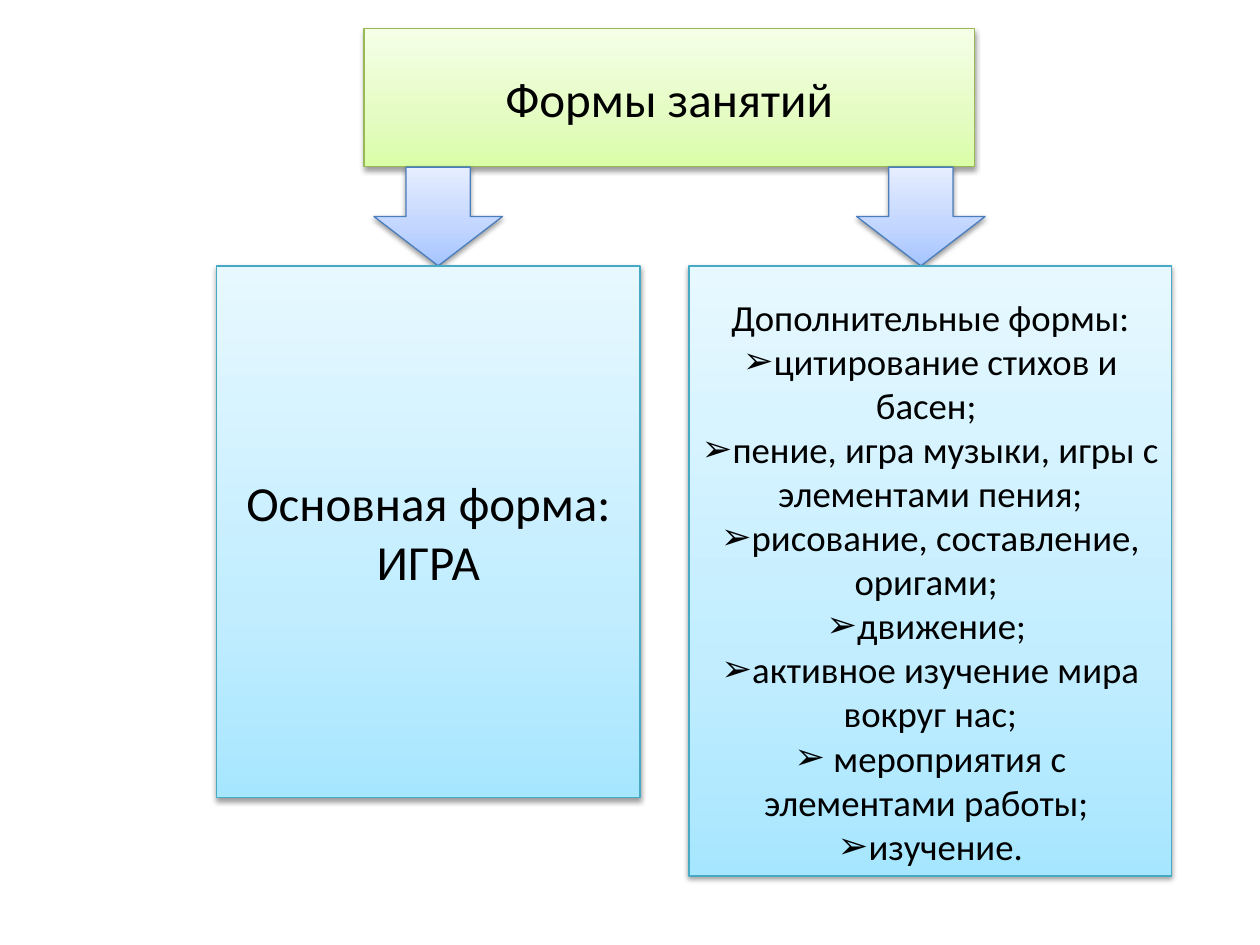
from copy import deepcopy
from dataclasses import dataclass

from lxml.etree import SubElement
from pptx import Presentation
from pptx.dml.color import RGBColor
from pptx.enum.shapes import MSO_SHAPE
from pptx.enum.text import MSO_ANCHOR, MSO_AUTO_SIZE, PP_ALIGN
from pptx.oxml.ns import qn
from pptx.util import Cm, Pt


@dataclass(frozen=True)
class Theme:
    # Each palette: bottom, middle and top of the gradient, then the line
    green: tuple = ("DAFDA7", "E4FCC2", "F5FFE7", "98B955")
    blue: tuple = ("A4C4FF", "BFD4FF", "E6EEFF", "4B7EBC")
    cyan: tuple = ("A7E6FF", "C1EDFF", "E7F8FF", "46AAC5")
    stops: tuple = (0, 0.35, 1)
    ink: str = "000000"
    font: str = "Calibri"
    big: int = 28
    small: int = 21


THEME = Theme()
TOP = 5.36  # upper edge of both panels, where the arrows end
HEAD = "Формы занятий"
MAIN = ["Основная форма:", "ИГРА"]
EXTRA = [
    "Дополнительные формы:",
    "цитирование стихов и басен; ",
    "пение, игра музыки, игры с элементами пения;",
    "рисование, составление, оригами; ",
    "движение; ",
    "активное изучение мира вокруг нас;",
    " мероприятия с элементами работы; ",
    "изучение.",
]


def place(shape, left, top, width, height):
    shape.left, shape.top = Cm(left), Cm(top)
    shape.width, shape.height = Cm(width), Cm(height)


def paint(shape, tones):
    """Give a shape its gradient, thin line and soft shadow."""
    fill = shape.fill
    fill.gradient()
    fill.gradient_angle = 90
    props = shape._element.spPr
    stops = props.find(".//" + qn("a:gsLst"))
    stops.insert(1, deepcopy(stops[0]))
    for stop, spot, tone in zip(fill.gradient_stops, THEME.stops, tones):
        stop.position = spot
        stop.color.rgb = RGBColor.from_string(tone)
    shape.line.color.rgb = RGBColor.from_string(tones[-1])
    shape.line.width = Pt(0.75)

    shape.shadow.inherit = False
    shade = SubElement(props.find(qn("a:effectLst")), qn("a:outerShdw"),
                       blurRad=str(Pt(3.1)), dist=str(Pt(1.6)),
                       dir="5400000", rotWithShape="0")
    black = SubElement(shade, qn("a:srgbClr"), val="000000")
    SubElement(black, qn("a:alpha"), val="38000")


def mark(para, sign):
    """Set the bullet sign of a paragraph, or none."""
    props = para._p.get_or_add_pPr()
    props.set("marL", "0")
    props.set("indent", "0")
    if sign:
        SubElement(props, qn("a:buChar"), char=sign)
    else:
        SubElement(props, qn("a:buNone"))


def write(shape, lines, size, sign=None):
    """Fill a box with centred lines; the sign marks all but the first."""
    frame = shape.text_frame
    frame.text = "\n".join(lines)
    frame.word_wrap = True
    frame.auto_size = MSO_AUTO_SIZE.NONE
    frame.vertical_anchor = MSO_ANCHOR.MIDDLE
    for i, para in enumerate(frame.paragraphs):
        para.alignment = PP_ALIGN.CENTER
        para.space_before = Pt(0)
        mark(para, sign if i else None)
        for run in para.runs:
            run.font.name = THEME.font
            run.font.size = Pt(size)
            run.font.color.rgb = RGBColor.from_string(THEME.ink)


def panel(shape, box, tones, lines, size, sign=None):
    place(shape, *box)
    paint(shape, tones)
    write(shape, lines, size, sign)


def arrow(slide, left):
    """Add an arrow from the heading to a panel, behind the panels."""
    shape = slide.shapes.add_shape(
        MSO_SHAPE.DOWN_ARROW, Cm(left), Cm(3.37), Cm(2.59), Cm(TOP - 3.37))
    paint(shape, THEME.blue)
    slide.shapes.title._element.addnext(shape._element)


def main():
    deck = Presentation()
    deck.slide_width, deck.slide_height = Cm(25.4), Cm(19.05)
    slide = deck.slides.add_slide(deck.slide_layouts[3])
    title, left, right = slide.placeholders

    # Heading
    panel(title, (7.34, 0.58, 12.3, 2.78), THEME.green, [HEAD], THEME.big)

    # Arrows to both panels
    for spot in (7.54, 17.27):
        arrow(slide, spot)

    # Main form and additional forms
    panel(left, (4.37, TOP, 8.53, 10.72), THEME.cyan, MAIN, THEME.big)
    panel(right, (13.89, TOP, 9.73, 12.3), THEME.cyan, EXTRA, THEME.small, "➢")
    right.text_frame.margin_top = Cm(0.53)

    deck.save("out.pptx")


if __name__ == "__main__":
    main()
